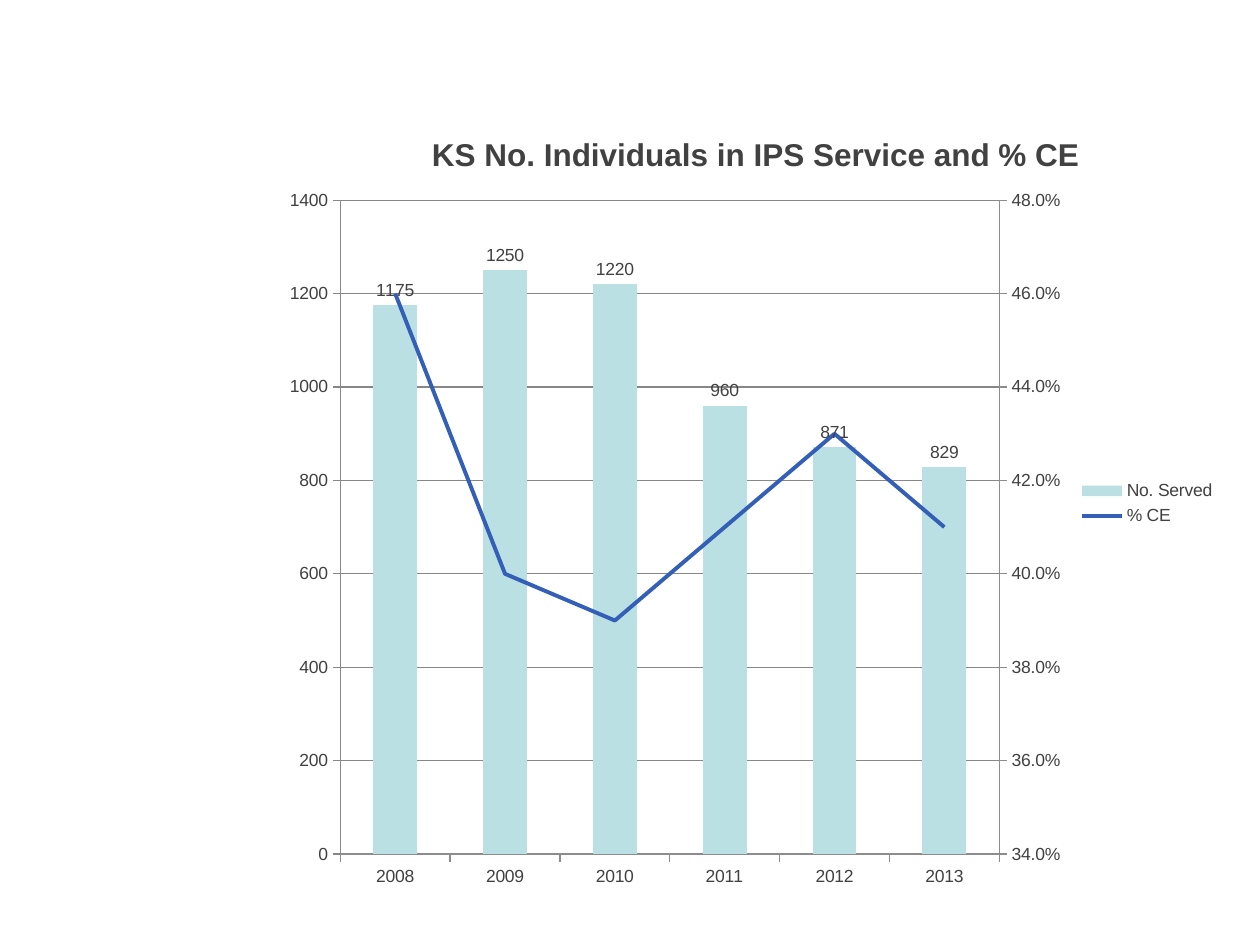
from copy import deepcopy

from pptx import Presentation
from pptx.chart.axis import ValueAxis
from pptx.chart.data import CategoryChartData as Data
from pptx.dml.color import RGBColor as Rgb
from pptx.enum.chart import XL_CHART_TYPE as Kind
from pptx.enum.chart import XL_LABEL_POSITION as Spot
from pptx.enum.chart import XL_LEGEND_POSITION as Side
from pptx.enum.chart import XL_MARKER_STYLE as Mark
from pptx.enum.chart import XL_TICK_MARK as Tick
from pptx.oxml import parse_xml
from pptx.oxml.ns import nsdecls, qn
from pptx.util import Inches, Pt

FACE, INK, GRAY, TEAL, BLUE = "Arial", "414141", "8C8C8C", "BBE0E3", "335FB7"
YEARS = ["2008", "2009", "2010", "2011", "2012", "2013"]
SERVED = [1175, 1250, 1220, 960, 871, 829]
RATES = [0.46, 0.4, 0.39, 0.41, 0.43, 0.41]


def paint(item, color):
    if hasattr(item, "solid"):
        item.solid()
        item.fore_color.rgb = Rgb.from_string(color)
    else:
        item.color.rgb = Rgb.from_string(color)


def style(font, size=10, bold=False, color=INK):
    font.name, font.size, font.bold = FACE, Pt(size), bold
    paint(font, color)


def write(frame, text, **form):
    run = frame.paragraphs[0].add_run()
    run.text = text
    style(run.font, **form)


def layout(inner="", **spots):
    modes = "".join(f'<c:{k}Mode val="edge"/>' for k in "xy")
    vals = "".join(f'<c:{k} val="{v}"/>' for k, v in spots.items())
    return parse_xml(f'<c:layout {nsdecls("c")}><c:manualLayout>'
                     f'{inner}{modes}{vals}</c:manualLayout></c:layout>')


def place(node, new, after=None):
    old = node.find(qn("c:layout"))
    if old is not None:
        node.remove(old)
    if after is None:
        node.insert(0, new)
    else:
        node.find(qn(after)).addnext(new)


def scale(axis, low, high, step, code):
    axis.minimum_scale, axis.maximum_scale = low, high
    axis.major_unit = step
    axis.tick_labels.number_format = code
    axis.tick_labels.number_format_is_linked = False


def trim(axis):
    axis.major_tick_mark, axis.minor_tick_mark = Tick.OUTSIDE, Tick.NONE
    paint(axis.format.line, GRAY)
    axis.format.line.width = Pt(0.75)
    style(axis.tick_labels.font)


def split(chart):
    area = chart.element.find(".//" + qn("c:plotArea"))
    bars = area.find(qn("c:barChart"))
    rate = bars.findall(qn("c:ser"))[1]
    flag = rate.find(qn("c:invertIfNegative"))
    if flag is not None:
        rate.remove(flag)
    line = parse_xml(f'<c:lineChart {nsdecls("c")}><c:grouping val="standard"/>'
                     '<c:varyColors val="0"/><c:marker val="1"/>'
                     '<c:axId val="501"/><c:axId val="502"/></c:lineChart>')
    line.find(qn("c:varyColors")).addnext(rate)
    bars.addnext(line)

    cat, val = (deepcopy(area.find(qn(n))) for n in ("c:catAx", "c:valAx"))
    for node, own, other in ((cat, "501", "502"), (val, "502", "501")):
        node.find(qn("c:axId")).set("val", own)
        node.find(qn("c:crossAx")).set("val", other)
    val.find(qn("c:axPos")).set("val", "r")
    val.find(qn("c:crosses")).set("val", "max")
    area.find(qn("c:valAx")).addnext(val)
    val.addnext(cat)
    cat.find(qn("c:delete")).set("val", "1")
    place(area, layout('<c:layoutTarget val="inner"/>',
                       x=0.07, y=0.12, w=0.69, h=0.82))
    return ValueAxis(val)


def draw(slide):
    data = Data()
    data.categories = YEARS
    data.add_series("No. Served", SERVED, "General")
    data.add_series("% CE", RATES, "0.0%")
    chart = slide.shapes.add_chart(
        Kind.COLUMN_CLUSTERED, Inches(2.17), Inches(0.83),
        Inches(7.58), Inches(6.33), data).chart
    style(chart.font)
    chart.has_title = True
    write(chart.chart_title.text_frame,
          "KS No. Individuals in IPS Service and % CE", size=18, bold=True)
    place(chart.element.find(".//" + qn("c:title")),
          layout(x=0.16, y=0.03), "c:tx")
    chart.has_legend = True
    chart.legend.position = Side.RIGHT
    chart.legend.include_in_layout = False
    style(chart.legend.font)

    right = split(chart)
    left = chart.value_axis
    right.has_major_gridlines = False
    left.has_major_gridlines = True
    paint(left.major_gridlines.format.line, GRAY)
    left.major_gridlines.format.line.width = Pt(0.75)
    for axis in (chart.category_axis, left, right):
        trim(axis)
    scale(left, 0, 1400, 200, "General")
    scale(right, 0.34, 0.48, 0.02, "0.0%")

    bars, line = chart.plots
    bars.gap_width, bars.vary_by_categories = 150, False
    served, rate = bars.series[0], line.series[0]
    paint(served.format.fill, TEAL)
    tags = served.data_labels
    tags.show_value, tags.position = True, Spot.OUTSIDE_END
    style(tags.font)
    paint(rate.format.line, BLUE)
    rate.format.line.width = Pt(2.25)
    rate.marker.style, rate.smooth = Mark.NONE, False


def main():
    deck = Presentation()
    deck.slide_width, deck.slide_height = Inches(10), Inches(7.5)
    slide = deck.slides.add_slide(deck.slide_layouts[6])
    paint(slide.background.fill, "FFFFFF")
    draw(slide)
    deck.save("out.pptx")


if __name__ == "__main__":
    main()
